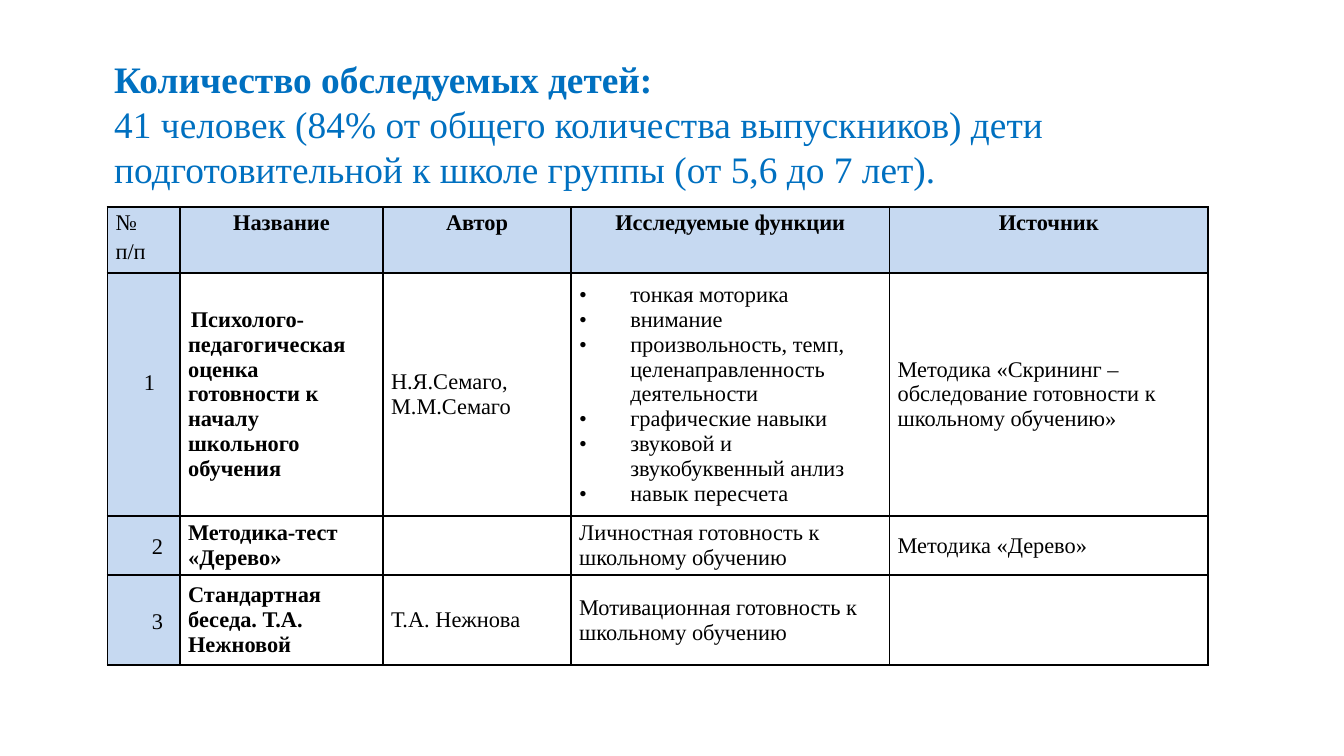
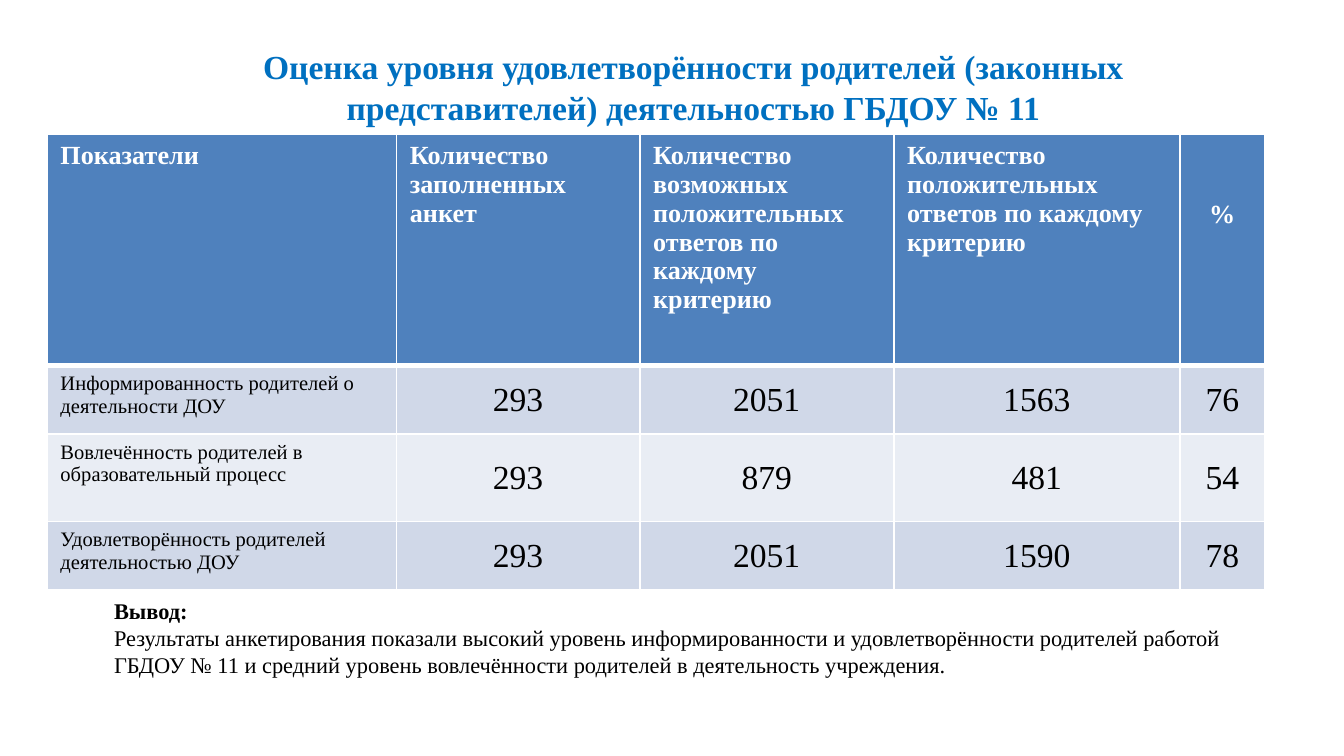
from dataclasses import dataclass
from typing import Optional

import lxml.etree
import pptx
import pptx.dml.color
import pptx.enum.text
import pptx.oxml.ns
import pptx.util

RGBColor = pptx.dml.color.RGBColor
Align = pptx.enum.text.PP_ALIGN
Anchor = pptx.enum.text.MSO_ANCHOR

EMU_PER_PX = 9144
FONT = "Times New Roman"
BLACK = RGBColor(0x00, 0x00, 0x00)
WHITE = RGBColor(0xFF, 0xFF, 0xFF)
TITLE_BLUE = RGBColor(0x00, 0x70, 0xC0)
PALE_BLUE = RGBColor(0xC6, 0xD9, 0xF1)
HEADER_BLUE = RGBColor(0x4F, 0x81, 0xBD)
BAND_DARK = RGBColor(0xD0, 0xD8, 0xE8)
BAND_LIGHT = RGBColor(0xE9, 0xED, 0xF4)


@dataclass(frozen=True)
class Area:
    left: int
    top: int
    width: int
    height: int


@dataclass(frozen=True)
class Margins:
    left: int
    top: int
    right: int
    bottom: int


TIGHT = Margins(6, 0, 6, 0)
ROOMY = Margins(10, 5, 10, 5)


@dataclass(frozen=True)
class CellSpec:
    lines: tuple[str, ...] = ()
    size: int = 12
    bold: bool = False
    color: RGBColor = BLACK
    fill: Optional[RGBColor] = None
    align: Align = Align.LEFT
    anchor: Anchor = Anchor.MIDDLE
    margins: Margins = TIGHT
    spacing: float = 1.0
    left_indent: int = 0
    first_indent: int = 0
    bullet: str = ""
    bottom_border: int = 1


@dataclass(frozen=True)
class TableSpec:
    left: int
    top: int
    columns: tuple[int, ...]
    heights: tuple[int, ...]
    border: RGBColor
    rows: list[list[CellSpec]]


def px(length: int) -> pptx.util.Emu:
    return pptx.util.Emu(length * EMU_PER_PX)


def place(box, area: Area) -> None:
    box.left, box.top = px(area.left), px(area.top)
    box.width, box.height = px(area.width), px(area.height)


def set_font(font, size: int, color: RGBColor, bold: Optional[bool] = None) -> None:
    font.name = FONT
    font.size = pptx.util.Pt(size)
    font.bold = bold
    font.color.rgb = color


def write_text(box, area: Area, size: int, color: RGBColor, lead: str,
               rest: str = "", align: Align = Align.LEFT,
               anchor: Anchor = Anchor.MIDDLE) -> None:
    place(box, area)
    frame = box.text_frame
    frame.word_wrap = True
    frame.auto_size = pptx.enum.text.MSO_AUTO_SIZE.NONE
    frame.vertical_anchor = anchor
    para = frame.paragraphs[0]
    para.alignment = align
    set_font(para.font, size, color)
    span = para.add_run()
    span.text = lead
    span.font.bold = True
    if rest:
        para.add_line_break()
        span = para.add_run()
        span.text = rest
        span.font.bold = False


def draw_borders(cell, color: RGBColor, bottom: int) -> None:
    qn = pptx.oxml.ns.qn
    properties = cell._tc.get_or_add_tcPr()
    for side, points in (("L", 1), ("R", 1), ("T", 1), ("B", bottom)):
        line = lxml.etree.SubElement(properties, qn(f"a:ln{side}"),
                                     w=str(pptx.util.Pt(points)))
        fill = lxml.etree.SubElement(line, qn("a:solidFill"))
        lxml.etree.SubElement(fill, qn("a:srgbClr"), val=str(color))


def write_cell(cell, spec: CellSpec, border: RGBColor) -> None:
    qn = pptx.oxml.ns.qn
    draw_borders(cell, border, spec.bottom_border)
    if spec.fill is None:
        cell.fill.background()
    else:
        cell.fill.solid()
        cell.fill.fore_color.rgb = spec.fill
    cell.vertical_anchor = spec.anchor
    cell.margin_left, cell.margin_top = px(spec.margins.left), px(spec.margins.top)
    cell.margin_right, cell.margin_bottom = px(spec.margins.right), px(spec.margins.bottom)
    frame = cell.text_frame
    for index, text in enumerate(spec.lines):
        para = frame.add_paragraph() if index else frame.paragraphs[0]
        properties = para._p.get_or_add_pPr()
        properties.set("marL", str(px(spec.left_indent)))
        properties.set("indent", str(px(spec.first_indent)))
        if spec.bullet:
            lxml.etree.SubElement(properties, qn("a:buFont"), typeface=FONT)
            lxml.etree.SubElement(properties, qn("a:buChar"), char=spec.bullet)
        para.alignment = spec.align
        para.line_spacing = spec.spacing
        para.text = text
        set_font(para.font, spec.size, spec.color, spec.bold)


def draw_table(page, spec: TableSpec) -> None:
    table = page.shapes.add_table(
        len(spec.heights), len(spec.columns), px(spec.left), px(spec.top),
        px(sum(spec.columns)), px(sum(spec.heights))).table
    table.first_row = False
    table.horz_banding = False
    for column, width in zip(table.columns, spec.columns):
        column.width = px(width)
    for row, height, cells in zip(table.rows, spec.heights, spec.rows):
        row.height = px(height)
        for cell, cell_spec in zip(row.cells, cells):
            write_cell(cell, cell_spec, spec.border)


def method_header(text: str, bold: bool = True, align: Align = Align.CENTER) -> CellSpec:
    return CellSpec((text,), bold=bold, align=align, fill=PALE_BLUE,
                    anchor=Anchor.TOP, spacing=1.15)


def method_number(text: str, indent: int = 27, margins: Margins = TIGHT) -> CellSpec:
    return CellSpec((text,), fill=PALE_BLUE, left_indent=indent,
                    margins=margins, spacing=1.15)


def method_name(text: str, first_indent: int = 0) -> CellSpec:
    return CellSpec((text,), bold=True, first_indent=first_indent)


def plain(text: str) -> CellSpec:
    return CellSpec((text,))


def survey_header(text: str) -> CellSpec:
    return CellSpec((text,), size=14, bold=True, color=WHITE, fill=HEADER_BLUE,
                    anchor=Anchor.TOP, margins=ROOMY, bottom_border=3)


def survey_row(name: str, values: tuple[int, ...], fill: RGBColor) -> list[CellSpec]:
    label = CellSpec((name,), size=11, fill=fill, anchor=Anchor.TOP, margins=ROOMY)
    return [label] + [CellSpec((str(value),), size=18, fill=fill,
                               align=Align.CENTER, margins=ROOMY) for value in values]


def build_methods(page) -> None:
    write_text(page.shapes.title, Area(75, 37, 829, 111), 20, TITLE_BLUE,
               "Количество обследуемых детей:",
               "41 человек (84% от общего количества выпускников) дети "
               "подготовительной к школе группы (от 5,6 до 7 лет).",
               anchor=Anchor.TOP)
    functions = CellSpec(
        ("тонкая моторика", "внимание",
         "произвольность, темп, целенаправленность деятельности",
         "графические навыки", "звуковой и звукобуквенный анлиз", "навык пересчета"),
        left_indent=38, first_indent=-38, bullet="•")
    headers = ("Название", "Автор", "Исследуемые функции", "Источник")
    draw_table(page, TableSpec(
        80, 154, (54, 151, 140, 237, 237), (49, 181, 44, 67), BLACK,
        [[method_header("№ п/п", bold=False, align=Align.LEFT),
          *map(method_header, headers)],
         [method_number("1", 21, Margins(6, 0, 6, 20)),
          method_name("Психолого-педагогическая оценка готовности к началу "
                      "школьного обучения", first_indent=2),
          plain("Н.Я.Семаго, М.М.Семаго"), functions,
          plain("Методика «Скрининг – обследование готовности к школьному обучению»")],
         [method_number("2"), method_name("Методика-тест «Дерево»"), CellSpec(),
          plain("Личностная готовность к школьному обучению"),
          plain("Методика «Дерево»")],
         [method_number("3"), method_name("Стандартная беседа. Т.А. Нежновой"),
          plain("Т.А. Нежнова"),
          plain("Мотивационная готовность к школьному обучению"), CellSpec()]]))


def build_survey(page) -> None:
    write_text(page.shapes.title, Area(130, 37, 772, 55), 18, TITLE_BLUE,
               "Оценка уровня удовлетворённости родителей (законных "
               "представителей) деятельностью ГБДОУ № 11", align=Align.CENTER)
    headers = ("Показатели", "Количество заполненных анкет",
               "Количество возможных положительных ответов по каждому критерию",
               "Количество положительных ответов по каждому критерию")
    percent = CellSpec(("%",), size=14, bold=True, color=WHITE, fill=HEADER_BLUE,
                       align=Align.CENTER, anchor=Anchor.TOP,
                       margins=Margins(10, 49, 10, 5), bottom_border=3)
    draw_table(page, TableSpec(
        35, 100, (260, 181, 189, 213, 63), (172, 51, 65, 51), WHITE,
        [[*map(survey_header, headers), percent],
         survey_row("Информированность родителей о деятельности ДОУ",
                    (293, 2051, 1563, 76), BAND_DARK),
         survey_row("Вовлечённость родителей в образовательный процесс",
                    (293, 879, 481, 54), BAND_LIGHT),
         survey_row("Удовлетворённость родителей деятельностью ДОУ",
                    (293, 2051, 1590, 78), BAND_DARK)]))
    area = Area(75, 447, 858, 55)
    conclusion = page.shapes.add_textbox(px(area.left), px(area.top),
                                         px(area.width), px(area.height))
    write_text(conclusion, area, 12, BLACK, "Вывод:",
               "Результаты анкетирования показали высокий уровень информированности "
               "и удовлетворённости родителей работой ГБДОУ № 11 и средний уровень "
               "вовлечённости родителей в деятельность учреждения.")


def main() -> None:
    deck = pptx.Presentation()
    deck.slide_width = px(1000)
    deck.slide_height = deck.slide_width * 9 // 16
    title_only = deck.slide_layouts[5]
    for build in (build_methods, build_survey):
        build(deck.slides.add_slide(title_only))
    deck.save("out.pptx")


if __name__ == "__main__":
    main()
